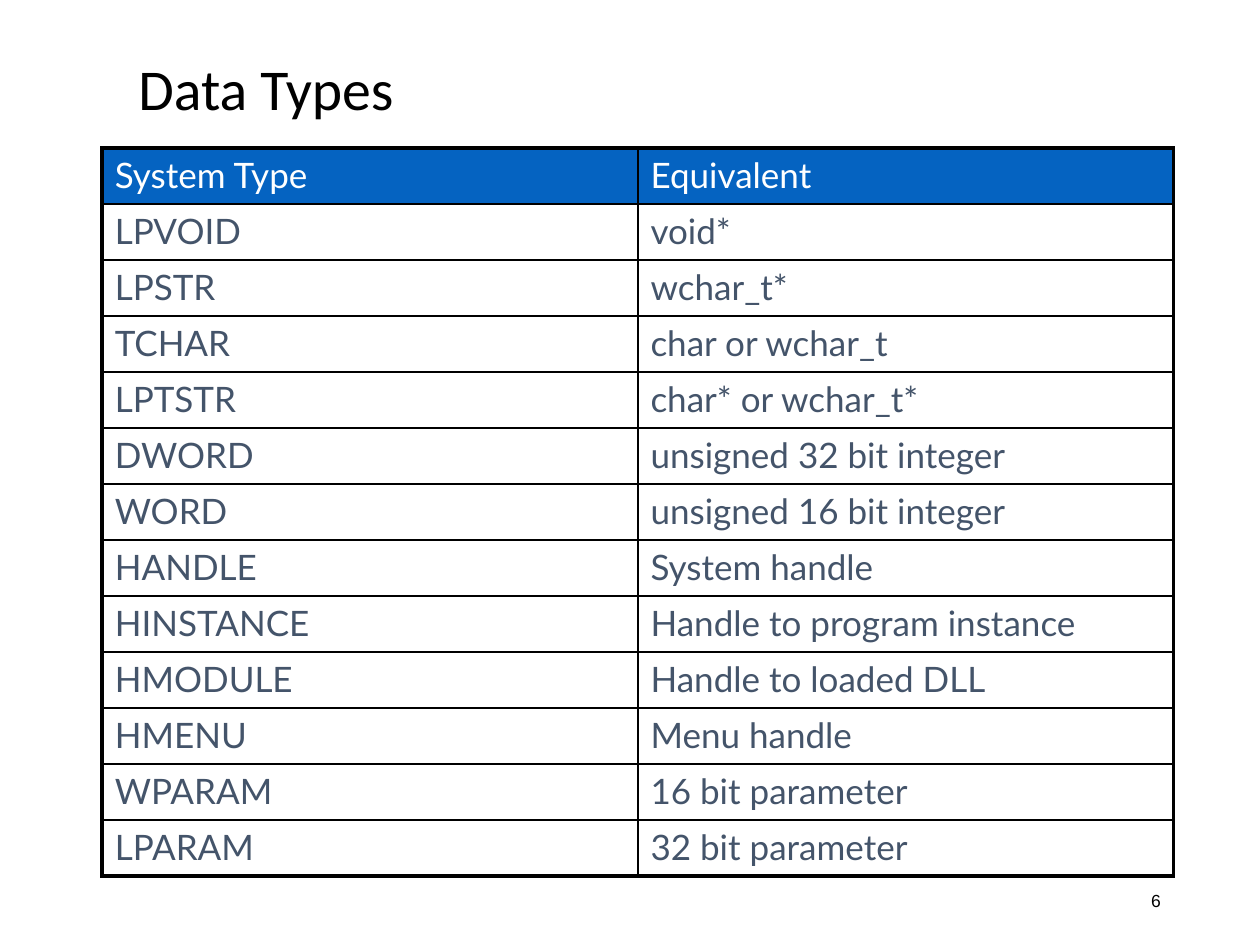
from lxml import etree
from pptx import Presentation
from pptx import util as u
from pptx.dml.color import RGBColor
from pptx.enum import text
from pptx.oxml.ns import qn

BLACK, WHITE, BLUE, SLATE = "000000", "FFFFFF", "0563C1", "44546A"
THIN, THICK = 1, 2.25
ROWS = [
    ("System Type", "Equivalent"),
    ("LPVOID", "void*"),
    ("LPSTR", "wchar_t*"),
    ("TCHAR", "char or wchar_t"),
    ("LPTSTR", "char* or wchar_t*"),
    ("DWORD", "unsigned 32 bit integer"),
    ("WORD", "unsigned 16 bit integer"),
    ("HANDLE", "System handle"),
    ("HINSTANCE", "Handle to program instance"),
    ("HMODULE", "Handle to loaded DLL"),
    ("HMENU", "Menu handle"),
    ("WPARAM", "16 bit parameter"),
    ("LPARAM", "32 bit parameter"),
]


def color(value):
    return RGBColor.from_string(value)


def set_text(text_frame, content, font_name, size, font_color):
    text_frame.text = content
    paragraph = text_frame.paragraphs[0]
    font = paragraph.runs[0].font
    font.name = font_name
    font.size = u.Pt(size)
    font.color.rgb = color(font_color)
    return paragraph


def add_label(slide, box, content, font_name, size):
    shape = slide.shapes.add_textbox(*(u.Cm(length) for length in box))
    text_frame = shape.text_frame
    text_frame.word_wrap = True
    text_frame.vertical_anchor = text.MSO_ANCHOR.MIDDLE
    return set_text(text_frame, content, font_name, size, BLACK)


def set_borders(cell, widths):
    """Draw the left, right, top and bottom borders, which precede the fill."""
    properties = cell._tc.get_or_add_tcPr()
    for index, (side, width) in enumerate(zip("LRTB", widths)):
        line = etree.Element(qn(f"a:ln{side}"), w=str(u.Pt(width)))
        fill = etree.SubElement(line, qn("a:solidFill"))
        etree.SubElement(fill, qn("a:srgbClr"), val=BLACK)
        properties.insert(index, line)


def add_type_table(slide, left, top, column_width, row_height):
    row_count, column_count = len(ROWS), len(ROWS[0])
    table = slide.shapes.add_table(
        row_count, column_count, u.Cm(left), u.Cm(top),
        u.Cm(column_width * column_count), u.Cm(row_height * row_count)).table
    table.horz_banding = False
    for row_index, entries in enumerate(ROWS):
        is_header = row_index == 0
        for column_index, entry in enumerate(entries):
            cell = table.cell(row_index, column_index)
            set_text(cell.text_frame, entry, "Lato", 20,
                     WHITE if is_header else SLATE).runs[0].font.bold = False
            if is_header:
                cell.fill.solid()
                cell.fill.fore_color.rgb = color(BLUE)
            else:
                cell.fill.background()
            # Thick lines on the outside of the table only
            outer = (column_index == 0, column_index == column_count - 1,
                     is_header, row_index == row_count - 1)
            set_borders(cell, [THICK if edge else THIN for edge in outer])


def main():
    presentation = Presentation()
    presentation.slide_width = u.Cm(25.4)
    presentation.slide_height = u.Cm(19.05)
    slide = presentation.slides.add_slide(presentation.slide_layouts[6])

    # Title
    title = add_label(slide, (2.54, 0.76, 21.59, 2.18), "Data Types", "Calibri", 33)
    title.line_spacing = 0.9

    # Table of types
    add_type_table(slide, left=2.06, top=2.98, column_width=10.8, row_height=1.13)

    # Slide number
    number = add_label(slide, (17.93, 17.65, 5.72, 1.02), "6", "Arial", 10)
    number.alignment = text.PP_ALIGN.RIGHT

    presentation.save("out.pptx")


if __name__ == "__main__":
    main()
